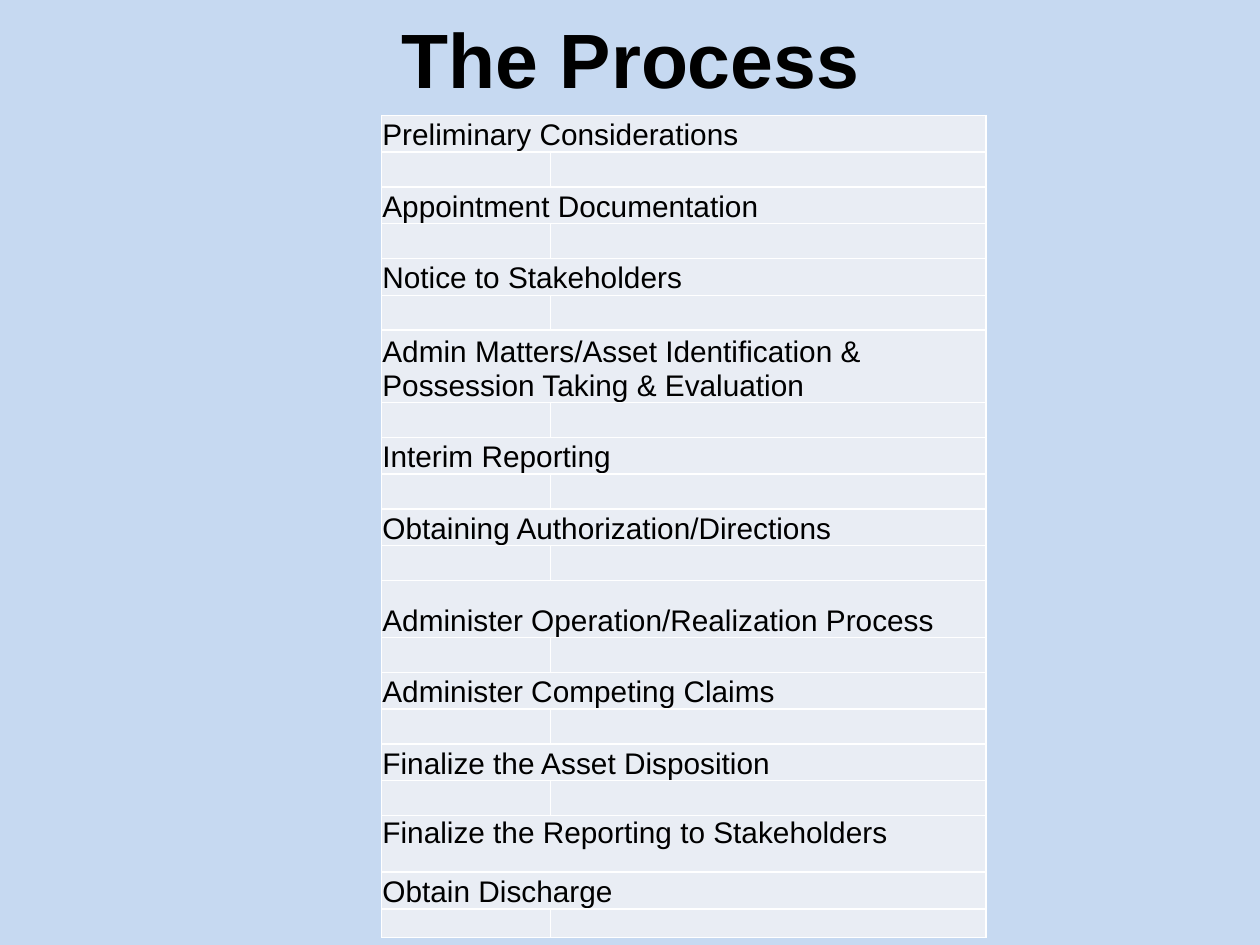
"""Build a slide listing the steps of the process in a table."""
from lxml.etree import SubElement
from pptx import Presentation
from pptx.dml.color import RGBColor
from pptx.enum.text import MSO_ANCHOR, PP_ALIGN
from pptx.oxml.ns import qn
from pptx.util import Pt

BACKGROUND = RGBColor(0xC6, 0xD9, 0xF1)
CELL_FILL = RGBColor(0xE9, 0xED, 0xF4)
BLACK = RGBColor(0, 0, 0)
BORDER = RGBColor(0xFF, 0xFF, 0xFF)
FONT = "Arial"
ROW_HEIGHT = 20

ROWS = [
    ("Preliminary Considerations", ROW_HEIGHT),
    ("", ROW_HEIGHT),
    ("Appointment Documentation", ROW_HEIGHT),
    ("", ROW_HEIGHT),
    ("Notice to Stakeholders", ROW_HEIGHT),
    ("", ROW_HEIGHT),
    ("Admin Matters/Asset Identification & Possession Taking & Evaluation", 39.5),
    ("", ROW_HEIGHT),
    ("Interim Reporting", ROW_HEIGHT),
    ("", ROW_HEIGHT),
    ("Obtaining Authorization/Directions", ROW_HEIGHT),
    ("", ROW_HEIGHT),
    ("Administer Operation/Realization Process", 32.4),
    ("", ROW_HEIGHT),
    ("Administer Competing Claims", ROW_HEIGHT),
    ("", ROW_HEIGHT),
    ("Finalize the Asset Disposition", ROW_HEIGHT),
    ("", ROW_HEIGHT),
    ("Finalize the Reporting to Stakeholders", 32.4),
    ("Obtain Discharge", ROW_HEIGHT),
    ("", 16.5),
]
TOP_ANCHORED = "Finalize the Reporting to Stakeholders"


def format_run(paragraph, size, bold=False):
    font = paragraph.runs[0].font
    font.name = FONT
    font.size = Pt(size)
    font.bold = bold
    font.color.rgb = BLACK


def format_cell(cell):
    cell.margin_left = cell.margin_right = cell.margin_top = Pt(0.5)
    cell.margin_bottom = Pt(0)
    properties = cell._tc.get_or_add_tcPr()
    for side in ("a:lnL", "a:lnR", "a:lnT", "a:lnB"):
        line = SubElement(properties, qn(side), w=str(Pt(1)))
        line_fill = SubElement(line, qn("a:solidFill"))
        SubElement(line_fill, qn("a:srgbClr"), val=str(BORDER))
    cell.fill.solid()
    cell.fill.fore_color.rgb = CELL_FILL


presentation = Presentation()
presentation.slide_width = Pt(720)
presentation.slide_height = Pt(540)
slide = presentation.slides.add_slide(presentation.slide_layouts[6])
slide.background.fill.solid()
slide.background.fill.fore_color.rgb = BACKGROUND

title = slide.shapes.add_textbox(Pt(36.5), Pt(0), Pt(648), Pt(66))
title.text_frame.word_wrap = True
title.text_frame.vertical_anchor = MSO_ANCHOR.MIDDLE
title.text_frame.text = "The Process"
title_paragraph = title.text_frame.paragraphs[0]
title_paragraph.alignment = PP_ALIGN.CENTER
format_run(title_paragraph, 44, bold=True)

table_height = sum(height for text, height in ROWS)
table = slide.shapes.add_table(
    len(ROWS), 2, Pt(218), Pt(66), Pt(345.5), Pt(table_height)
).table
table.first_row = False
table.horz_banding = False
table.columns[0].width = Pt(96.5)
table.columns[1].width = Pt(249)

for index, (text, height) in enumerate(ROWS):
    table.rows[index].height = Pt(height)
    first, second = table.cell(index, 0), table.cell(index, 1)
    for cell in (first, second):
        format_cell(cell)
    if text:
        first.merge(second)
        first.text_frame.text = text
        first.vertical_anchor = MSO_ANCHOR.TOP if text == TOP_ANCHORED else MSO_ANCHOR.BOTTOM
        format_run(first.text_frame.paragraphs[0], 17)
    else:
        for cell in (first, second):
            SubElement(cell.text_frame.paragraphs[0]._p, qn("a:endParaRPr"), sz="1200")

presentation.save("out.pptx")
